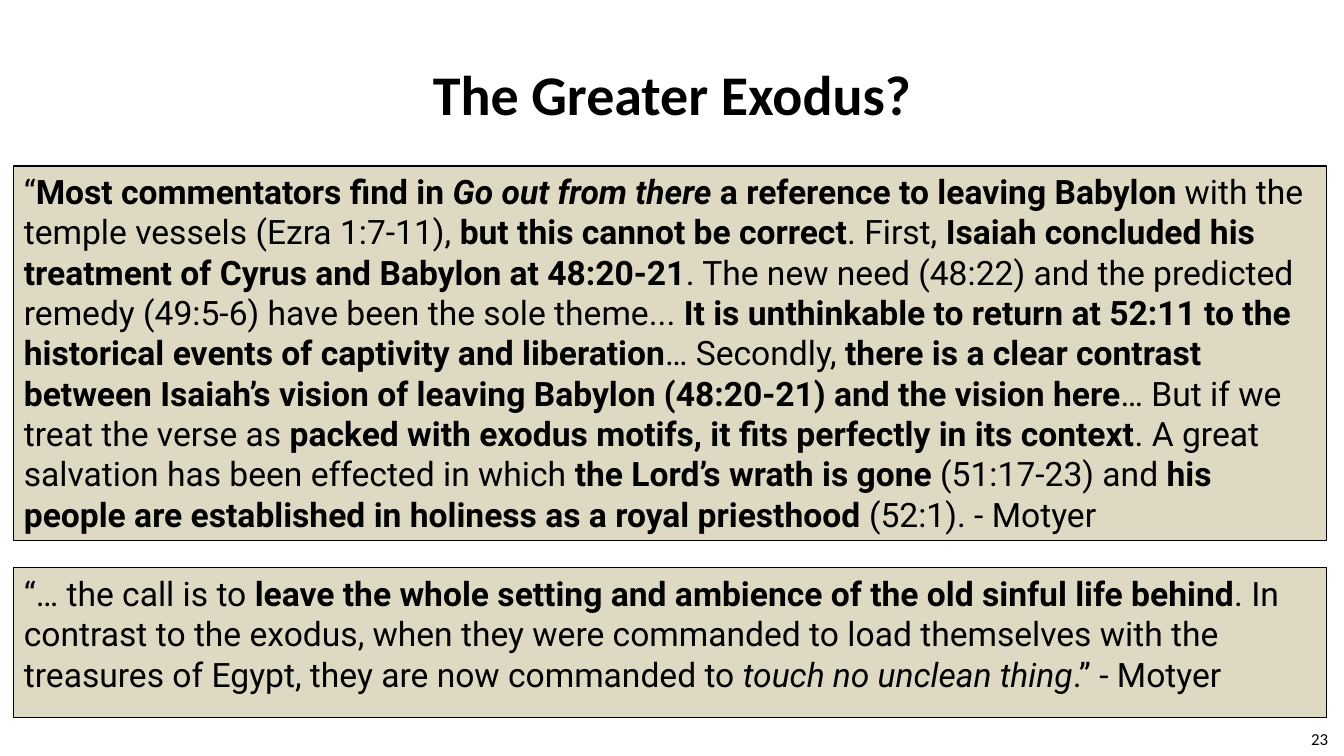
from dataclasses import dataclass

from pptx import Presentation
from pptx.dml.color import RGBColor
from pptx.enum.shapes import MSO_SHAPE as Shape
from pptx.enum.text import MSO_ANCHOR as Anchor, PP_ALIGN as Align
from pptx.util import Emu, Pt


@dataclass(frozen=True)
class Theme:
    ink: RGBColor = RGBColor(0x00, 0x00, 0x00)
    panel: RGBColor = RGBColor(0xDD, 0xD9, 0xC3)
    heading_font: str = "Calibri"
    quote_font: str = "Roboto"
    title_size: int = 40
    quote_size: int = 24
    number_size: int = 12
    outline: float = 0.75


theme = Theme()


def px(*lengths):
    """Turn pixels (100.8 to the inch) into EMU."""
    return [Emu(round(length * 914400 / 100.8)) for length in lengths]


def write(box, runs, font, size, align, anchor):
    """Fill a box with one paragraph of (text, style) runs; style holds b and/or i."""
    frame = box.text_frame
    frame.word_wrap = True
    frame.vertical_anchor = anchor
    para = frame.paragraphs[0]
    para.alignment = align
    for text, style in runs:
        span = para.add_run()
        span.text = text
        span.font.name = font
        span.font.size = Pt(size)
        span.font.color.rgb = theme.ink
        span.font.bold = "b" in style
        span.font.italic = "i" in style


deck = Presentation()
deck.slide_width, deck.slide_height = px(1344, 756)
page = deck.slides.add_slide(deck.slide_layouts[6])

# Slide number and title
number_box = page.shapes.add_textbox(*px(1237, 719, 101, 40))
write(number_box, [("23", "")], theme.heading_font, theme.number_size,
      Align.RIGHT, Anchor.MIDDLE)
title_box = page.shapes.add_textbox(*px(67, 30, 1210, 126))
write(title_box, [("The Greater Exodus?", "b")], theme.heading_font,
      theme.title_size, Align.CENTER, Anchor.MIDDLE)

# Quotations: top, height, runs
context_quote = [
    ("“", ""),
    ("Most commentators find in ", "b"),
    ("Go out from there ", "bi"),
    ("a reference to leaving Babylon ", "b"),
    ("with the temple vessels (Ezra 1:7-11), ", ""),
    ("but this cannot be correct", "b"),
    (". First, ", ""),
    ("Isaiah concluded his treatment of Cyrus and Babylon at 48:20-21", "b"),
    (". The new need (48:22) and the predicted remedy (49:5-6) "
     "have been the sole theme... ", ""),
    ("It is unthinkable to return at 52:11 to the historical events "
     "of captivity and liberation", "b"),
    ("… Secondly, ", ""),
    ("there is a clear contrast between Isaiah’s vision of leaving Babylon "
     "(48:20-21) and the vision here", "b"),
    ("… But if we treat the verse as ", ""),
    ("packed with exodus motifs, it fits perfectly in its context", "b"),
    (". A great salvation has been effected in which ", ""),
    ("the Lord’s wrath is gone ", "b"),
    ("(51:17-23) and ", ""),
    ("his people are established in holiness as a royal priesthood ", "b"),
    ("(52:1). - Motyer", ""),
]
call_quote = [
    ("“… the call is to ", ""),
    ("leave the whole setting and ambience of the old sinful life behind", "b"),
    (". In contrast to the exodus, when they were commanded to load themselves "
     "with the treasures of Egypt, they are now commanded to ", ""),
    ("touch no unclean thing", "i"),
    (".” - Motyer", ""),
]

for top, height, runs in [(166, 375, context_quote), (568, 150, call_quote)]:
    panel = page.shapes.add_shape(Shape.RECTANGLE, *px(14, top, 1313, height))
    panel.shadow.inherit = False
    panel.fill.solid()
    panel.fill.fore_color.rgb = theme.panel
    panel.line.color.rgb = theme.ink
    panel.line.width = Pt(theme.outline)
    write(panel, runs, theme.quote_font, theme.quote_size, Align.LEFT, Anchor.TOP)

deck.save("out.pptx")
